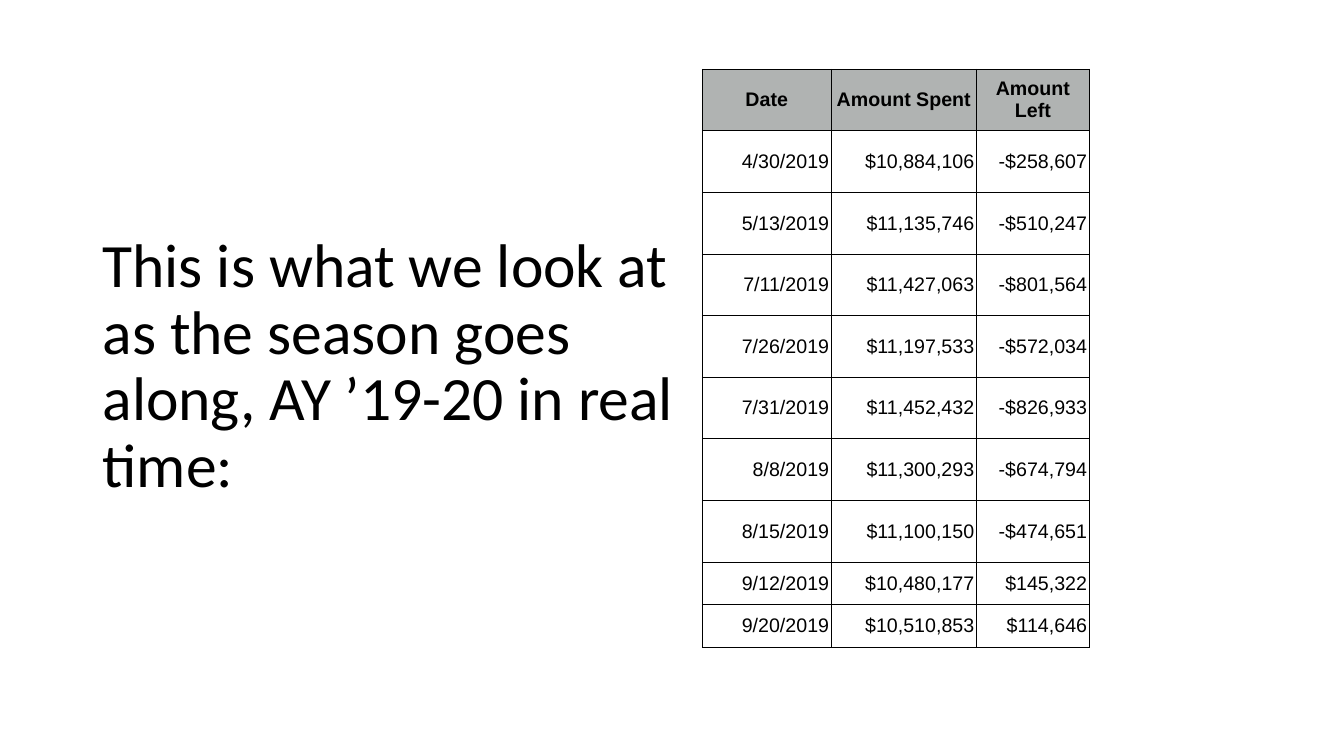
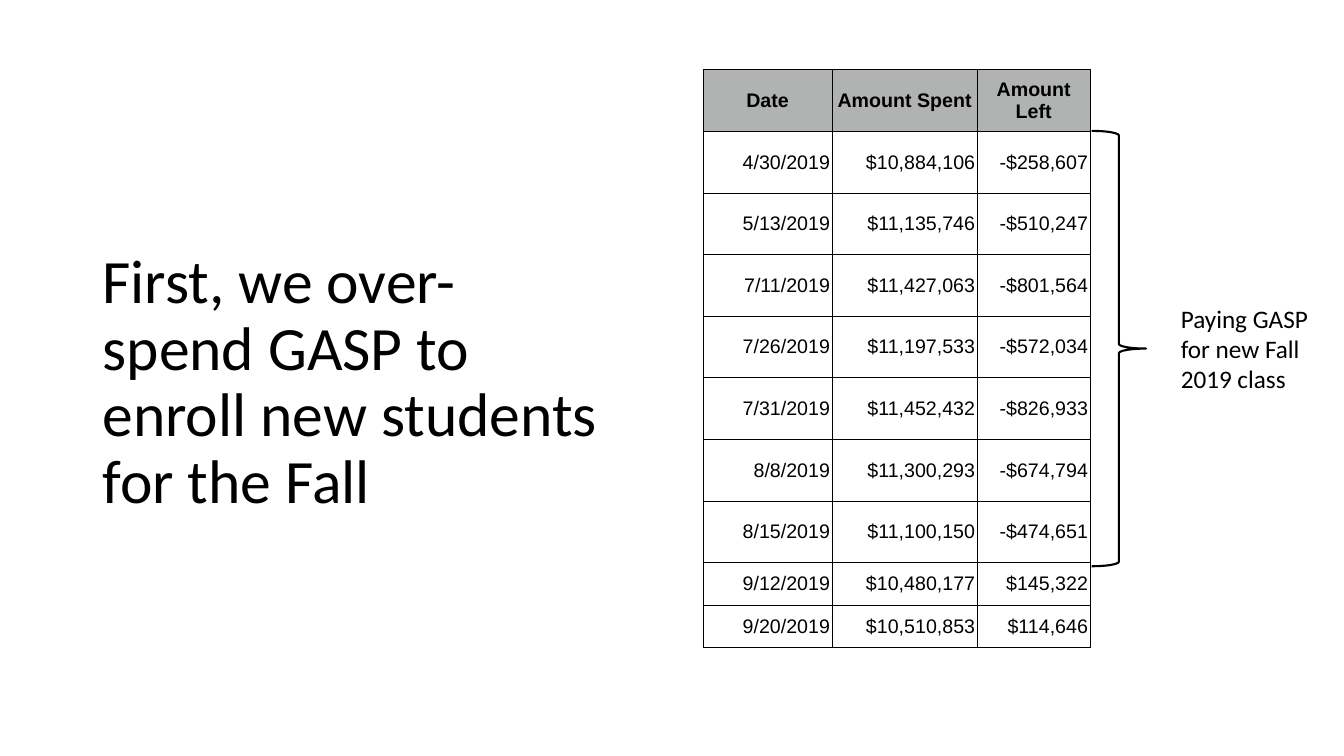
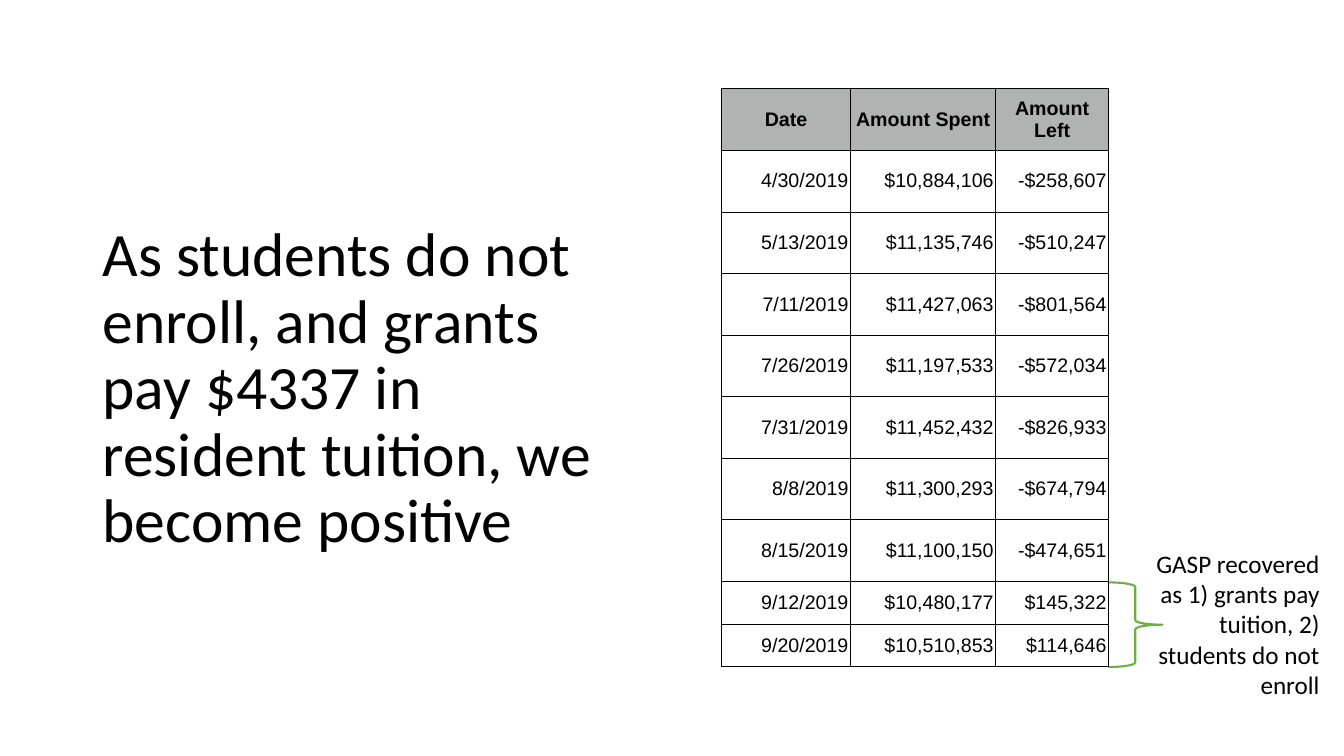
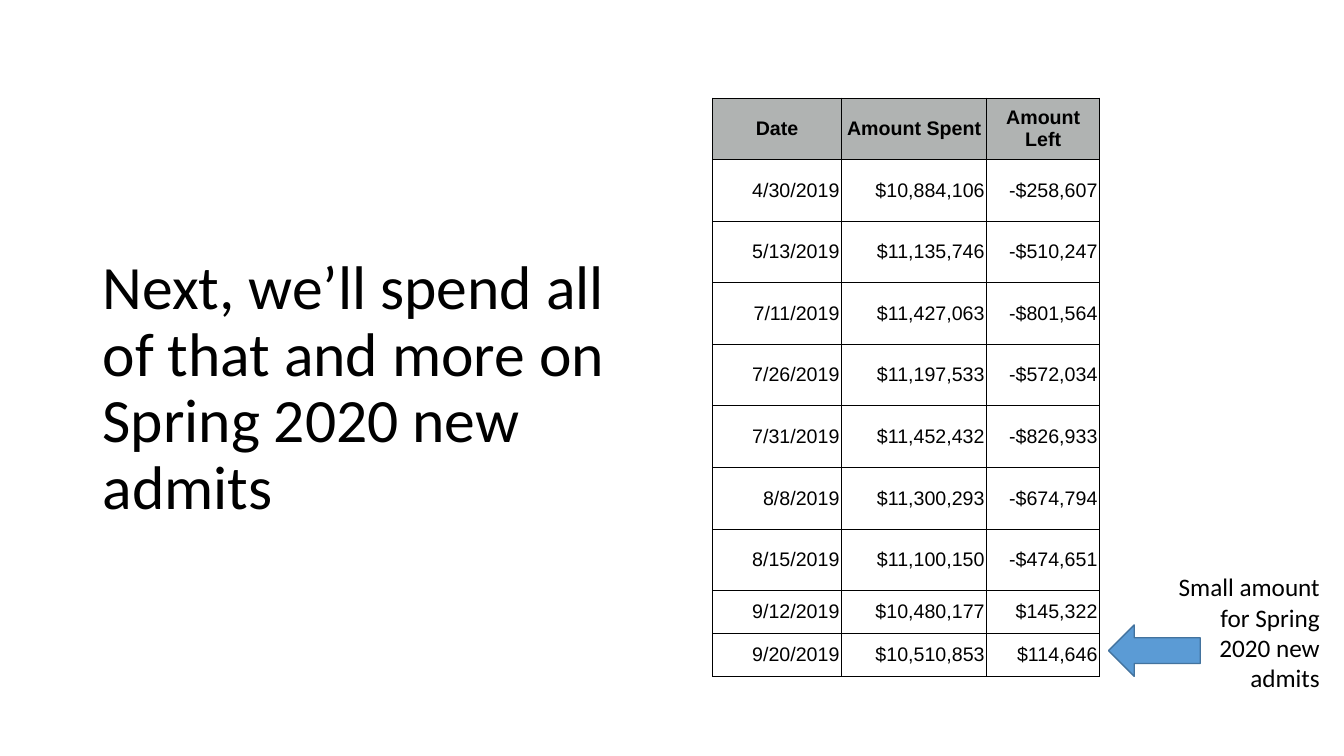
"""Builds four slides on how grant spending develops over the season."""
from lxml import etree
from pptx import Presentation
from pptx.dml.color import RGBColor
from pptx.enum.shapes import MSO_SHAPE
from pptx.enum.text import MSO_ANCHOR, MSO_AUTO_SIZE, PP_ALIGN
from pptx.oxml.ns import qn
from pptx.util import Pt

BLACK = RGBColor(0x00, 0x00, 0x00)
HEADER_GRAY = RGBColor(0xB0, 0xB3, 0xB2)
GREEN = RGBColor(0x70, 0xAD, 0x47)
BLUE = RGBColor(0x5B, 0x9B, 0xD5)
DARK_BLUE = RGBColor(0x43, 0x73, 0x9E)

LEFT, CENTER, RIGHT = PP_ALIGN.LEFT, PP_ALIGN.CENTER, PP_ALIGN.RIGHT
MIDDLE = MSO_ANCHOR.MIDDLE
GROW = MSO_AUTO_SIZE.SHAPE_TO_FIT_TEXT
BRACE, DOWN_ARROW = MSO_SHAPE.RIGHT_BRACE, MSO_SHAPE.DOWN_ARROW

COLUMN_WIDTHS = [92.2, 103.7, 80.6]
ROW_HEIGHTS = [44] * 8 + [30.5] * 2
SPENDING = [
    ("Date", "Amount Spent", "Amount Left"),
    ("4/30/2019", "$10,884,106", "-$258,607"),
    ("5/13/2019", "$11,135,746", "-$510,247"),
    ("7/11/2019", "$11,427,063", "-$801,564"),
    ("7/26/2019", "$11,197,533", "-$572,034"),
    ("7/31/2019", "$11,452,432", "-$826,933"),
    ("8/8/2019", "$11,300,293", "-$674,794"),
    ("8/15/2019", "$11,100,150", "-$474,651"),
    ("9/12/2019", "$10,480,177", "$145,322"),
    ("9/20/2019", "$10,510,853", "$114,646"),
]


class Deck:
    """Holds the shared style and the current slide."""

    text_font, table_font = "Calibri", "Arial"
    title_size, note_size, table_size = 44, 18, 14
    title_left, title_top = 66.2, 28.8
    cell_margin, border_width = 1.5, 0.75

    def __init__(self):
        self.presentation = Presentation()
        self.presentation.slide_width = Pt(960)
        self.presentation.slide_height = Pt(540)
        self.slide = None

    def add_slide(self):
        self.slide = self.presentation.slides.add_slide(self.presentation.slide_layouts[6])

    def style(self, paragraph, font, size, align, bold=False):
        paragraph.alignment = align
        for run in paragraph.runs:
            run.font.name = font
            run.font.size = Pt(size)
            run.font.bold = bold
            run.font.color.rgb = BLACK

    def text(self, text, left, top, width, height, size, align):
        box = self.slide.shapes.add_textbox(Pt(left), Pt(top), Pt(width), Pt(height))
        frame = box.text_frame
        frame.word_wrap = True
        frame.text = text
        self.style(frame.paragraphs[0], self.text_font, size, align)
        return frame

    def title(self, text, width, height):
        frame = self.text(text, self.title_left, self.title_top, width, height,
                          self.title_size, LEFT)
        frame.vertical_anchor = MIDDLE
        frame.paragraphs[0].line_spacing = 0.9

    def note(self, text, left, top, width, height, align=RIGHT):
        frame = self.text(text, left, top, width, height, self.note_size, align)
        frame.auto_size = GROW

    def marker(self, preset, left, top, width, height, line, line_width):
        shape = self.slide.shapes.add_shape(preset, Pt(left), Pt(top), Pt(width), Pt(height))
        shape.shadow.inherit = False
        shape.fill.background()
        shape.line.color.rgb = line
        shape.line.width = Pt(line_width)
        return shape

    def brace(self, left, top, height, color):
        self.marker(BRACE, left, top, 38.9, height, color, 1.5)

    def left_arrow(self, left, top, width, height):
        arrow = self.marker(DOWN_ARROW, left, top, width, height, DARK_BLUE, 1)
        arrow.rotation = 90
        arrow.fill.solid()
        arrow.fill.fore_color.rgb = BLUE

    def borders(self, cell):
        properties = cell._tc.get_or_add_tcPr()
        for side in ("a:lnL", "a:lnR", "a:lnT", "a:lnB"):
            line = etree.SubElement(properties, qn(side), w=str(Pt(self.border_width)))
            fill = etree.SubElement(line, qn("a:solidFill"))
            etree.SubElement(fill, qn("a:srgbClr"), val=str(BLACK))

    def cell(self, cell, text, is_header):
        cell.margin_left = cell.margin_right = Pt(self.cell_margin)
        cell.margin_top = cell.margin_bottom = Pt(self.cell_margin)
        cell.vertical_anchor = MIDDLE
        cell.text_frame.text = text
        self.style(cell.text_frame.paragraphs[0], self.table_font, self.table_size,
                   CENTER if is_header else RIGHT, is_header)
        self.borders(cell)
        if is_header:
            cell.fill.solid()
            cell.fill.fore_color.rgb = HEADER_GRAY
        else:
            cell.fill.background()

    def spending_table(self, left, top):
        table = self.slide.shapes.add_table(
            len(SPENDING), len(COLUMN_WIDTHS), Pt(left), Pt(top),
            Pt(sum(COLUMN_WIDTHS)), Pt(sum(ROW_HEIGHTS))).table
        table.first_row = table.horz_banding = False
        for column, width in zip(table.columns, COLUMN_WIDTHS):
            column.width = Pt(width)
        for index, (row, height, values) in enumerate(zip(table.rows, ROW_HEIGHTS, SPENDING)):
            row.height = Pt(height)
            for cell, value in zip(row.cells, values):
                self.cell(cell, value, index == 0)


def main():
    deck = Deck()

    deck.add_slide()
    deck.title("This is what we look at as the season goes along, AY ’19-20 in real time:",
               456.5, 467.3)
    deck.spending_table(501.6, 49.5)

    deck.add_slide()
    deck.title("First, we over-spend GASP to enroll new students for the Fall", 370, 490.3)
    deck.brace(779.8, 93.5, 311, BLACK)
    deck.note("Paying GASP for new Fall 2019 class", 836.4, 213.1, 115.2, 72.7, LEFT)
    deck.spending_table(502.2, 49.9)

    deck.add_slide()
    deck.title("As students do not enroll, and grants pay $4337 in resident tuition, "
               "we become positive", 394.6, 499)
    deck.brace(791.5, 416, 60.5, GREEN)
    deck.note("GASP recovered as 1) grants pay tuition, 2) students do not enroll",
              811.4, 388.1, 138.2, 116.6)
    deck.spending_table(515.4, 63.4)

    deck.add_slide()
    deck.title("Next, we’ll spend all of that and more on Spring 2020 new admits", 394.6, 499)
    deck.note("Small amount for Spring 2020 new admits", 833.8, 404.8, 116, 94.3)
    deck.spending_table(509, 70)
    deck.left_arrow(806.2, 432, 36.7, 65.5)

    deck.presentation.save("out.pptx")


if __name__ == "__main__":
    main()
